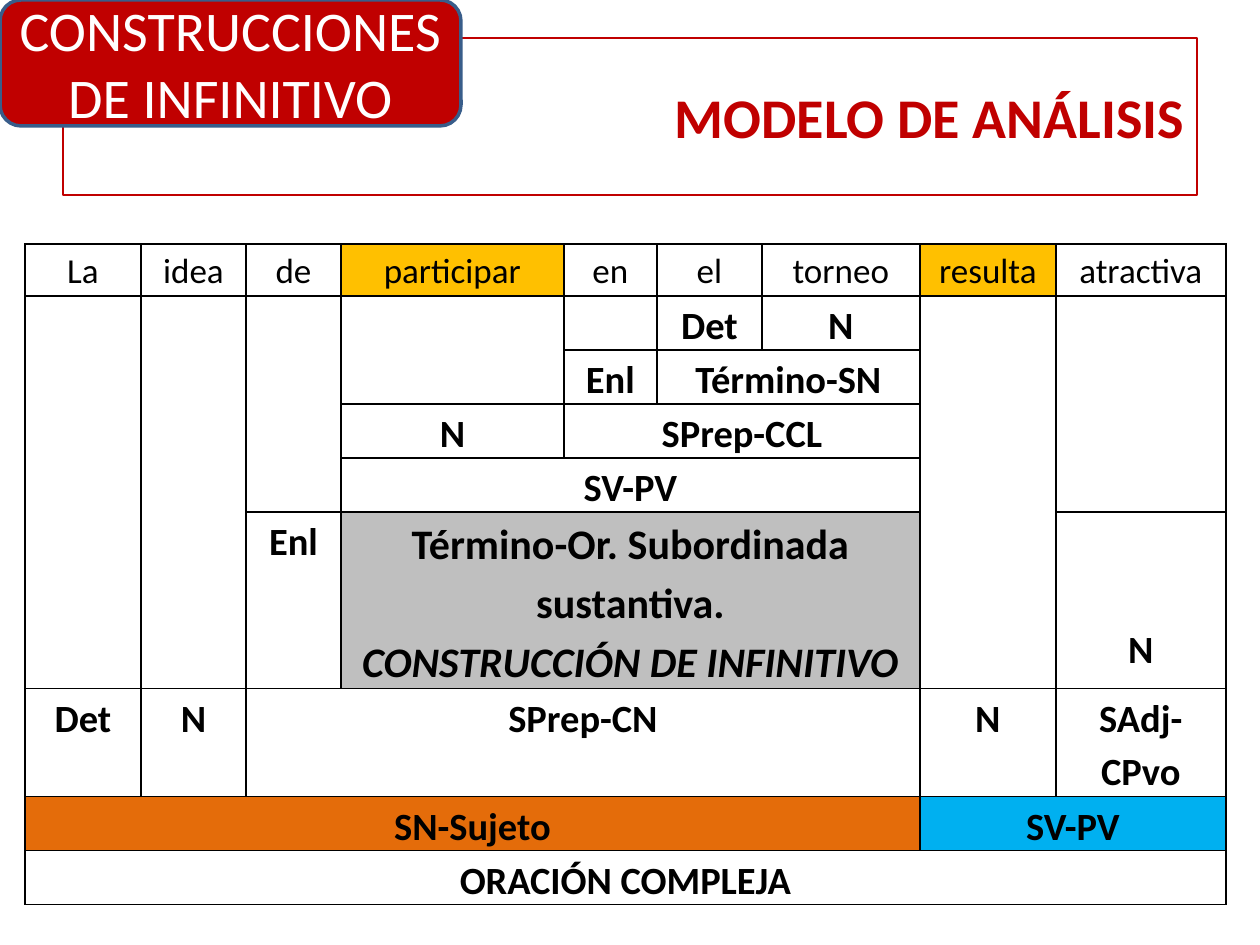
from lxml.etree import SubElement
from pptx import Presentation
from pptx.dml.color import RGBColor
from pptx.enum.shapes import MSO_SHAPE
from pptx.enum.text import MSO_ANCHOR, PP_ALIGN
from pptx.oxml.ns import qn
from pptx.util import Emu, Pt

BLACK = RGBColor(0x00, 0x00, 0x00)
WHITE = RGBColor(0xFF, 0xFF, 0xFF)
RED = RGBColor(0xC0, 0x00, 0x00)
NAVY = RGBColor(0x38, 0x5D, 0x8A)
AMBER = RGBColor(0xFF, 0xC0, 0x00)
GREY = RGBColor(0xBF, 0xBF, 0xBF)
ORANGE = RGBColor(0xE4, 0x6C, 0x0A)
BLUE = RGBColor(0x00, 0xB0, 0xF0)

PX_PER_INCH = 126


def px(length):
    return Emu(round(length * 914400 / PX_PER_INCH))


class SlideBuilder:
    font_name = "Calibri"
    heading_size = 32
    cell_margin = 9
    border_width = Pt(1)

    def __init__(self, page):
        self.page = page

    def style(self, paragraph, size, color, bold=False, align=PP_ALIGN.CENTER):
        paragraph.alignment = align
        font = paragraph.font
        font.name, font.size, font.bold = self.font_name, Pt(size), bold
        font.color.rgb = color

    def box(self, kind, place, text, line, line_width, fill=None, **text_style):
        box = self.page.shapes.add_shape(kind, *map(px, place))
        box.shadow.inherit = False
        if fill is None:
            box.fill.background()
        else:
            box.fill.solid()
            box.fill.fore_color.rgb = fill
        box.line.color.rgb = line
        box.line.width = Pt(line_width)
        frame = box.text_frame
        frame.word_wrap = True
        frame.vertical_anchor = MSO_ANCHOR.MIDDLE
        frame.text = text
        self.style(frame.paragraphs[0], self.heading_size, **text_style)

    def table(self, left, top, widths, heights):
        place = map(px, (left, top, sum(widths), sum(heights)))
        table = self.page.shapes.add_table(len(heights), len(widths), *place).table
        table.first_row = table.horz_banding = False
        for column, width in zip(table.columns, widths):
            column.width = px(width)
        for row, height in zip(table.rows, heights):
            row.height = px(height)
        for cell in table.iter_cells():
            cell.margin_left = cell.margin_right = px(self.cell_margin)
            cell.margin_top = cell.margin_bottom = 0
            self.border(cell)
            cell.fill.background()
        return table

    def border(self, cell):
        properties = cell._tc.get_or_add_tcPr()
        for side in ("a:lnL", "a:lnR", "a:lnT", "a:lnB"):
            line = SubElement(properties, qn(side), w=str(self.border_width))
            fill = SubElement(line, qn("a:solidFill"))
            SubElement(fill, qn("a:srgbClr"), val=str(BLACK))

    def cell(self, table, row, column, text="", rows=1, columns=1,
             size=22, bold=True, fill=None):
        cell = table.cell(row, column)
        if rows > 1 or columns > 1:
            cell.merge(table.cell(row + rows - 1, column + columns - 1))
        if fill is not None:
            cell.fill.solid()
            cell.fill.fore_color.rgb = fill
        cell.text = text
        for paragraph in cell.text_frame.paragraphs:
            self.style(paragraph, size, BLACK, bold)
            paragraph.line_spacing = 1.15
        return cell


def main():
    deck = Presentation()
    deck.slide_width, deck.slide_height = px(1260), px(945)
    builder = SlideBuilder(deck.slides.add_slide(deck.slide_layouts[6]))

    # Title frame
    builder.box(MSO_SHAPE.RECTANGLE, (63, 38, 1134, 157), "MODELO DE ANÁLISIS",
                RED, 0.75, color=RED, bold=True, align=PP_ALIGN.RIGHT)

    # Sentence analysis grid
    table = builder.table(25, 244, (116, 105, 95, 223, 93, 105, 158, 136, 170),
                          (52, 54, 54, 54, 54, 176, 108, 54, 54))

    # Words of the sentence, with both verbs highlighted
    words = "La idea de participar en el torneo resulta atractiva".split()
    verbs = ("participar", "resulta")
    for column, word in enumerate(words):
        builder.cell(table, 0, column, word, size=20, bold=False,
                     fill=AMBER if word in verbs else None)

    # Empty cells above each word's label: column, rows spanned
    for column, rows in ((0, 5), (1, 5), (2, 4), (3, 2), (4, 1), (7, 5), (8, 4)):
        builder.cell(table, 1, column, rows=rows)

    # Labels: row, column, text, columns spanned, fill
    labels = (
        (1, 5, "Det", 1, None), (1, 6, "N", 1, None),
        (2, 4, "Enl", 1, None), (2, 5, "Término-SN", 2, None),
        (3, 3, "N", 1, None), (3, 4, "SPrep-CCL", 3, None),
        (4, 3, "SV-PV", 4, None),
        (5, 2, "Enl", 1, None),
        (6, 0, "Det", 1, None), (6, 1, "N", 1, None),
        (6, 2, "SPrep-CN", 5, None),
        (6, 7, "N", 1, None), (6, 8, "SAdj-CPvo", 1, None),
        (7, 0, "SN-Sujeto", 7, ORANGE), (7, 7, "SV-PV", 2, BLUE),
        (8, 0, "ORACIÓN COMPLEJA", 9, None),
    )
    for row, column, text, columns, fill in labels:
        builder.cell(table, row, column, text, columns=columns, fill=fill)

    # Subordinate clause and the lowered label beside it
    clause = builder.cell(
        table, 5, 3, "Término-Or. Subordinada sustantiva.\nCONSTRUCCIÓN DE INFINITIVO",
        columns=4, size=24, fill=GREY)
    clause.text_frame.paragraphs[1].font.italic = True
    builder.cell(table, 5, 8, "N").margin_top = px(108)

    # Topic badge
    builder.box(MSO_SHAPE.ROUNDED_RECTANGLE, (0, 0, 461, 126),
                "CONSTRUCCIONES DE INFINITIVO", NAVY, 2, fill=RED, color=WHITE)

    deck.save("out.pptx")


if __name__ == "__main__":
    main()
